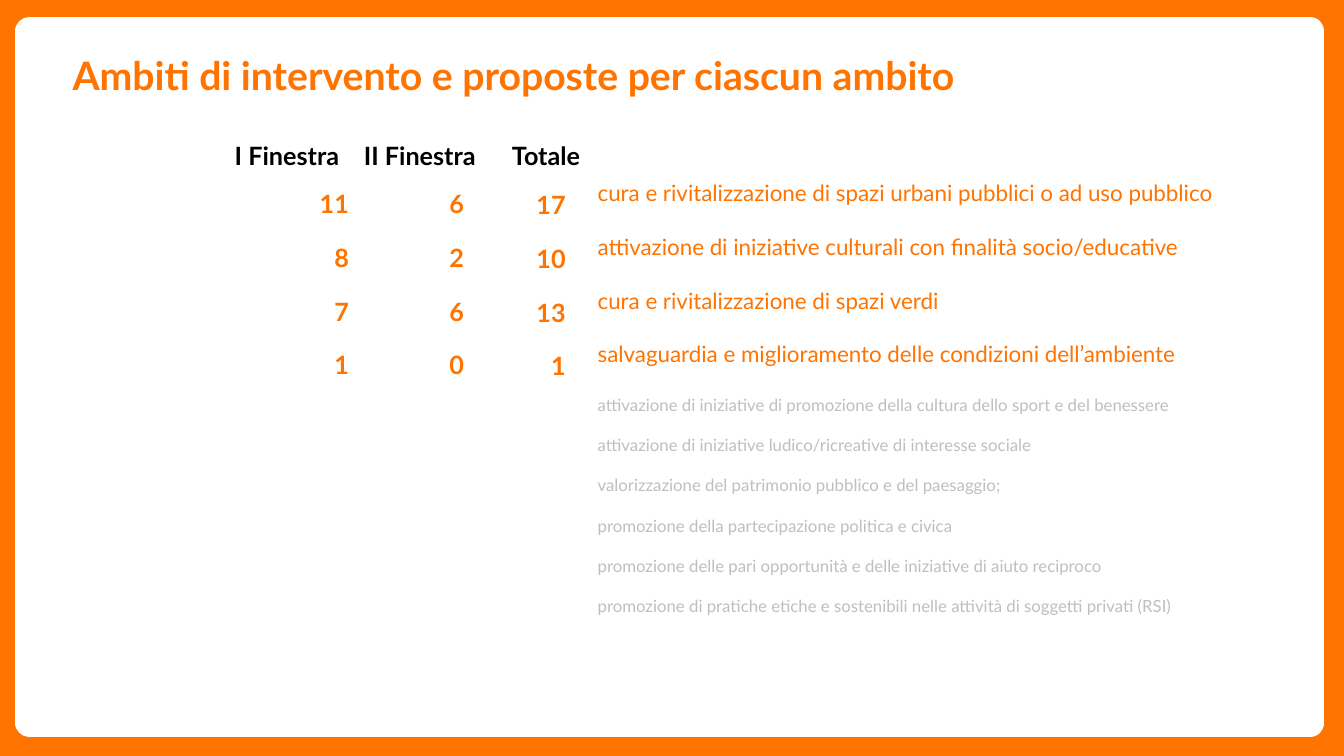
from dataclasses import dataclass

from lxml import etree
from pptx import Presentation
from pptx.dml.color import RGBColor
from pptx.enum.shapes import MSO_SHAPE
from pptx.enum.text import MSO_ANCHOR, PP_ALIGN
from pptx.oxml.ns import qn
from pptx.util import Pt

RECTANGLE = MSO_SHAPE.RECTANGLE
TOP, BOTTOM = MSO_ANCHOR.TOP, MSO_ANCHOR.BOTTOM
LEFT, RIGHT = PP_ALIGN.LEFT, PP_ALIGN.RIGHT


@dataclass(frozen=True)
class Theme:
    font: str = "Lato"
    orange: RGBColor = RGBColor(0xFF, 0x73, 0x00)
    white: RGBColor = RGBColor(0xFF, 0xFF, 0xFF)
    black: RGBColor = RGBColor(0x00, 0x00, 0x00)
    grey: RGBColor = RGBColor(0xBF, 0xBF, 0xBF)
    title: int = 28
    number: int = 18
    active_area: int = 16
    idle_area: int = 12


theme = Theme()

deck = Presentation()
deck.slide_width, deck.slide_height = Pt(960), Pt(540)
page = deck.slides.add_slide(deck.slide_layouts[6])


def add_box(place, margins=(7.2, 3.6, 7.2, 3.6), anchor=TOP):
    """Add a wrapping text box and return its text frame."""
    frame = page.shapes.add_textbox(*map(Pt, place)).text_frame
    sides = ("margin_left", "margin_top", "margin_right", "margin_bottom")
    settings = dict(zip(sides, map(Pt, margins)))
    settings.update(word_wrap=True, vertical_anchor=anchor)
    for name, value in settings.items():
        setattr(frame, name, value)
    return frame


def write(frame, index, text, size, color, bold=False, **layout):
    """Write one paragraph, opening a new one after the first."""
    para = frame.add_paragraph() if index else frame.paragraphs[0]
    for name, value in layout.items():
        setattr(para, name, value)
    span = para.add_run()
    span.text = text
    font_values = {"name": theme.font, "size": Pt(size), "bold": bold}
    for name, value in font_values.items():
        setattr(span.font, name, value)
    span.font.color.rgb = color
    return para


# Orange frame around a white panel with rounded line joins
border = page.shapes.add_shape(RECTANGLE, Pt(-8), Pt(-12), Pt(979), Pt(564))
panel = page.shapes.add_shape(RECTANGLE, Pt(21), Pt(22.3), Pt(915), Pt(494))
for shape, color in ((border, theme.orange), (panel, theme.white)):
    shape.shadow.inherit = False
    shape.fill.solid()
    shape.fill.fore_color.rgb = color
border.line.fill.background()
panel.line.color.rgb = theme.white
panel.line.width = Pt(20)
etree.SubElement(panel.line._get_or_add_ln(), qn("a:round"))

# Areas of intervention: those with proposals, then those without
areas = [
    (theme.active_area, theme.orange, [
        "cura e rivitalizzazione di spazi urbani pubblici o ad uso pubblico",
        "attivazione di iniziative culturali con finalità socio/educative",
        "cura e rivitalizzazione di spazi verdi",
        "salvaguardia e miglioramento delle condizioni dell’ambiente",
    ]),
    (theme.idle_area, theme.grey, [
        "attivazione di iniziative di promozione della cultura dello sport e del benessere",
        "attivazione di iniziative ludico/ricreative di interesse sociale",
        "valorizzazione del patrimonio pubblico e del paesaggio;",
        "promozione della partecipazione politica e civica",
        "promozione delle pari opportunità e delle iniziative di aiuto reciproco",
        "promozione di pratiche etiche e sostenibili nelle attività di soggetti privati (RSI)",
    ]),
]
area_frame = add_box((419.8, 124.6, 490.3, 322.6))
index = 0
for size, color, names in areas:
    for name in names:
        write(area_frame, index, name, size, color, space_after=Pt(size * 1.2))
        index += 1

# Proposals per window and in total
columns = [
    (209.5, 120.2, 191.5, (11, 8, 7, 1)),
    (291.6, 120.2, 152.6, (6, 2, 6, 0)),
    (364.3, 121, 191.5, (17, 10, 13, 1)),
]
for left, top, height, counts in columns:
    count_frame = add_box((left, top, 46.8, height))
    for index, count in enumerate(counts):
        write(count_frame, index, str(count), theme.number, theme.orange, True,
              alignment=RIGHT, line_spacing=1.5, space_after=Pt(6))

# Column headings on tab stops
heading_frame = add_box((160.6, 74.2, 321.1, 51.1), anchor=BOTTOM)
headings = write(heading_frame, 0, "\t".join(["I Finestra", "II Finestra", "Totale"]),
                 theme.number, theme.black, True, alignment=LEFT)
tab_list = etree.SubElement(headings._p.get_or_add_pPr(), qn("a:tabLst"))
for stop in (92.2, 198):
    etree.SubElement(tab_list, qn("a:tab"), pos=str(Pt(stop)), algn="l")

title_frame = add_box((51.1, 34.6, 828, 35.3), margins=(0.7, 1.7, 0, 0))
write(title_frame, 0, "Ambiti di intervento e proposte per ciascun ambito",
      theme.title, theme.orange, True)

deck.save("out.pptx")
